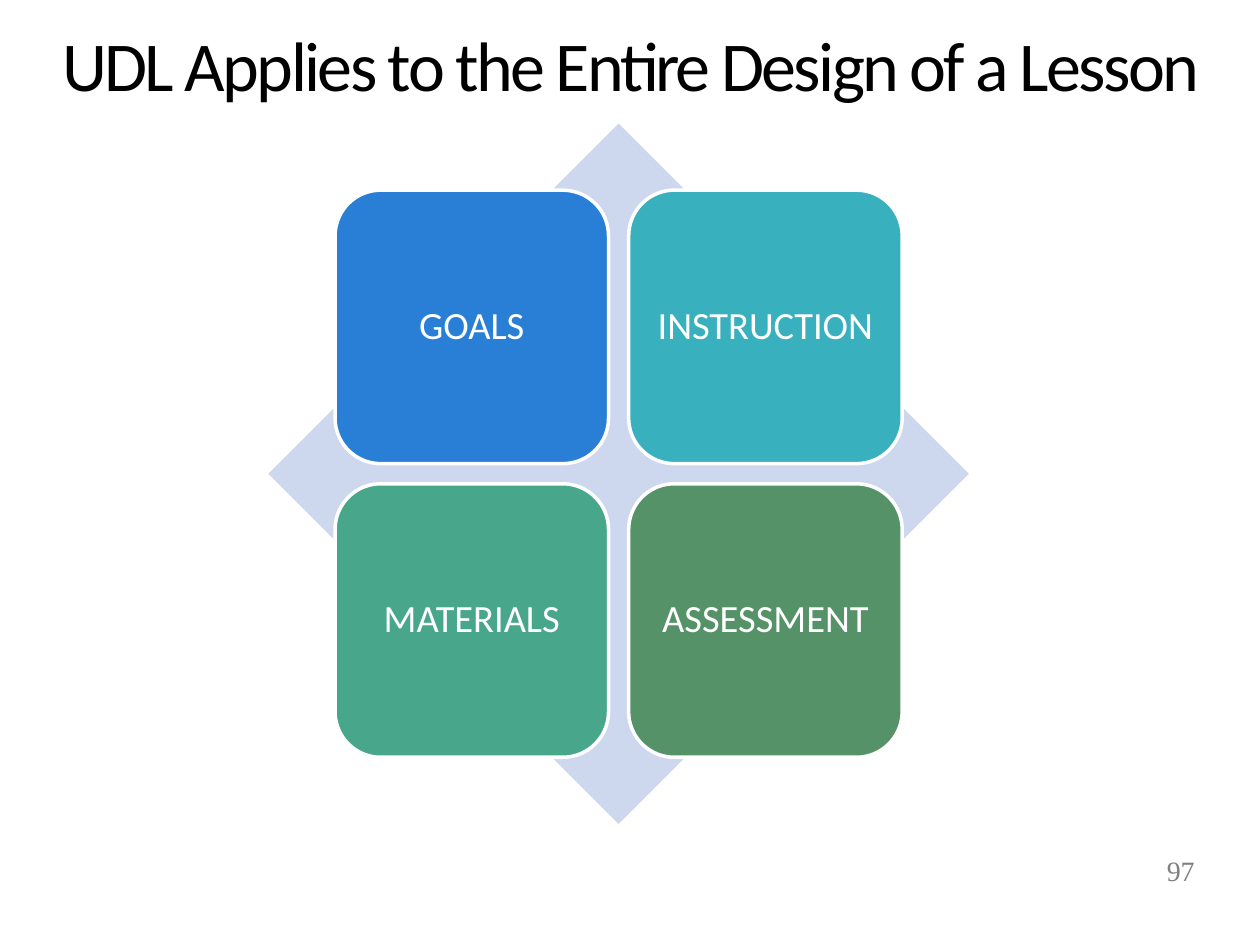
"""Build the slide on UDL and the four parts of a lesson's design."""
from pptx import Presentation
from pptx.dml.color import RGBColor
from pptx.enum import shapes, text
from pptx.util import Inches, Pt

HEADING = "UDL Applies to the Entire Design of a Lesson"
PAGE_NUMBER = "97"
LESSON_PARTS = [
    [("GOALS", "blue"), ("INSTRUCTION", "teal")],
    [("MATERIALS", "mint"), ("ASSESSMENT", "green")],
]
COLORS = {
    "black": "000000",
    "white": "FFFFFF",
    "gray": "808080",
    "pale": "CDD8EF",
    "blue": "297FD5",
    "teal": "39B0BE",
    "mint": "48A78B",
    "green": "569268",
}
DIAMOND_LEFT, DIAMOND_TOP, DIAMOND_SIZE = 2.13, 0.98, 5.56
TILE_SIZE, TILE_STEP = 2.17, 2.33
TILE_INSET = (DIAMOND_SIZE - TILE_SIZE - TILE_STEP) / 2


def color(name):
    return RGBColor.from_string(COLORS[name])


def write(frame, words, size, font, tint, align, margins=(0.1, 0.05),
          anchor=text.MSO_ANCHOR.MIDDLE):
    frame.word_wrap = True
    frame.vertical_anchor = anchor
    frame.margin_left = frame.margin_right = Inches(margins[0])
    frame.margin_top = frame.margin_bottom = Inches(margins[1])
    paragraph = frame.paragraphs[0]
    paragraph.alignment = align
    run = paragraph.add_run()
    run.text = words
    run.font.size = Pt(size)
    run.font.name = font
    run.font.color.rgb = color(tint)
    return paragraph, run


def add_figure(group, preset, left, top, size, fill):
    figure = group.shapes.add_shape(
        preset, Inches(left), Inches(top), Inches(size), Inches(size))
    figure.shadow.inherit = False
    figure.fill.solid()
    figure.fill.fore_color.rgb = color(fill)
    figure.line.fill.background()
    return figure


def main():
    deck = Presentation()
    deck.slide_width, deck.slide_height = Inches(10), Inches(7.5)
    slide = deck.slides.add_slide(deck.slide_layouts[5])

    heading = slide.shapes.title
    heading.left, heading.top = Inches(0.42), Inches(0.25)
    heading.width, heading.height = Inches(9.17), Inches(0.73)
    paragraph, run = write(heading.text_frame, HEADING, 40, "Calibri", "black",
                           text.PP_ALIGN.CENTER, (0, 0), text.MSO_ANCHOR.TOP)
    heading.text_frame.auto_size = text.MSO_AUTO_SIZE.SHAPE_TO_FIT_TEXT
    paragraph.line_spacing = 0.9
    run.font._element.set("spc", "-150")

    page = slide.shapes.add_textbox(
        Inches(7.17), Inches(6.64), Inches(2.41), Inches(0.53))
    write(page.text_frame, PAGE_NUMBER, 16, "Times New Roman", "gray",
          text.PP_ALIGN.RIGHT)

    matrix = slide.shapes.add_group_shape()
    add_figure(matrix, shapes.MSO_SHAPE.DIAMOND, DIAMOND_LEFT, DIAMOND_TOP,
               DIAMOND_SIZE, "pale")
    for row, parts in enumerate(LESSON_PARTS):
        for column, (label, fill) in enumerate(parts):
            tile = add_figure(matrix, shapes.MSO_SHAPE.ROUNDED_RECTANGLE,
                              DIAMOND_LEFT + TILE_INSET + column * TILE_STEP,
                              DIAMOND_TOP + TILE_INSET + row * TILE_STEP,
                              TILE_SIZE, fill)
            tile.line.color.rgb = color("white")
            tile.line.width = Pt(2)
            paragraph, run = write(tile.text_frame, label, 22, "Calibri", "white",
                                   text.PP_ALIGN.CENTER, (0.09, 0.09))
            paragraph.line_spacing = 0.9

    deck.save("out.pptx")


if __name__ == "__main__":
    main()
